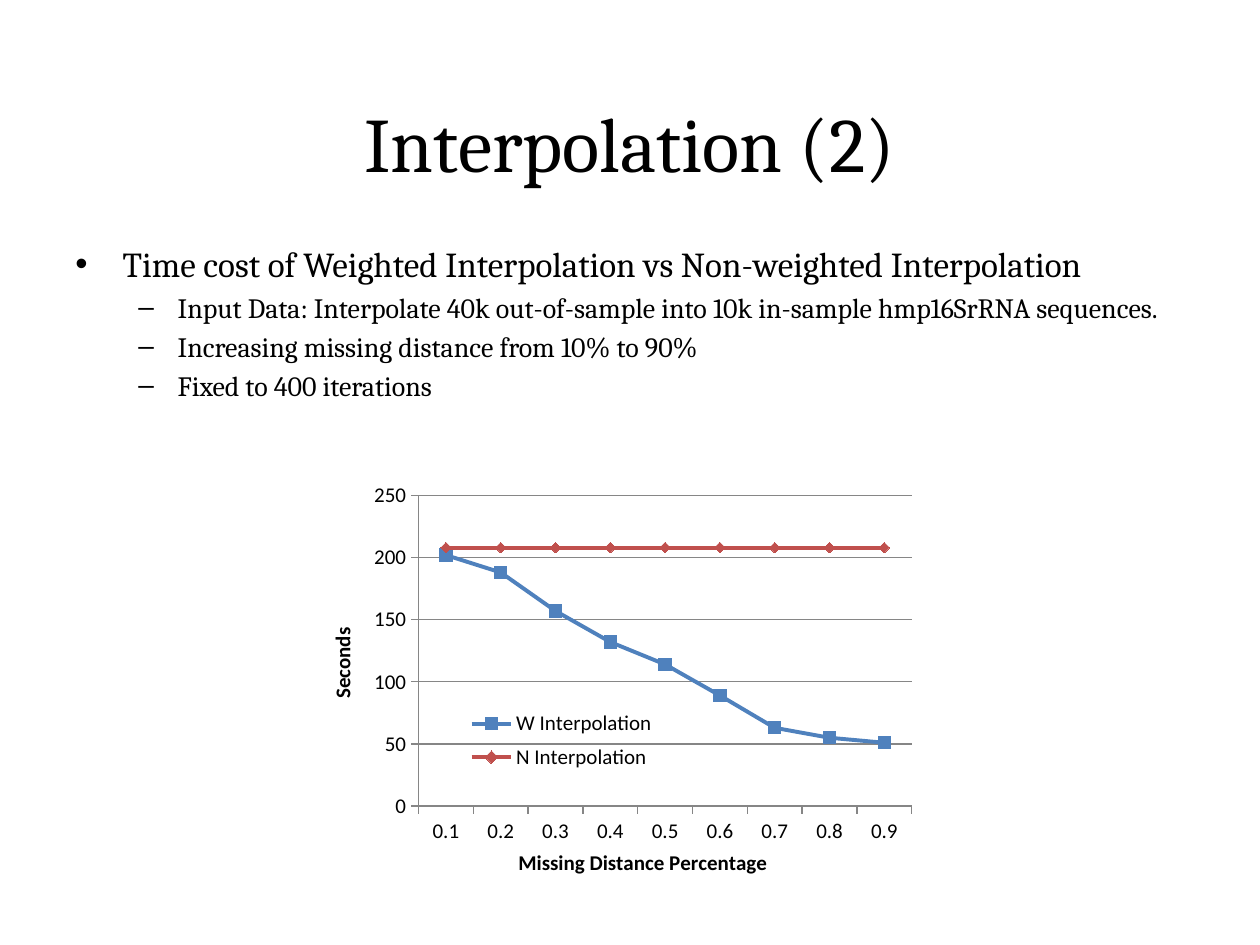
from dataclasses import dataclass

from lxml import etree
from pptx import Presentation
from pptx.chart import data as cd
from pptx.dml import color as col
from pptx.enum import chart as ch, text as tx
from pptx.oxml import ns
from pptx.util import Pt


@dataclass(frozen=True)
class Theme:
    ink: str = "000000"
    grid: str = "868686"
    blue: str = "4F81BD"
    red: str = "C0504D"
    serif: str = "Cambria"
    sans: str = "Calibri"
    title: int = 44
    body: int = 20
    sub: int = 16
    small: int = 12


THEME = Theme()
HEAD = "Interpolation (2)"
POINTS = [
    (0, "Time cost of Weighted Interpolation vs Non-weighted Interpolation"),
    (1, "Input Data: Interpolate 40k out-of-sample into 10k in-sample hmp16SrRNA sequences."),
    (1, "Increasing missing distance from 10% to 90%"),
    (1, "Fixed to 400 iterations"),
]
LEVELS = [("•", 27, -27, THEME.body), ("–", 58.5, -22.5, THEME.sub)]
CATS = [f"0.{n}" for n in range(1, 10)]
SERIES = [
    ("W Interpolation", [202, 188, 157, 132, 114, 89, 63, 55, 51],
     THEME.blue, ch.XL_MARKER_STYLE.SQUARE, 7),
    ("N Interpolation", [208] * 9, THEME.red, ch.XL_MARKER_STYLE.DIAMOND, 6),
]


def rgb(code):
    return col.RGBColor.from_string(code)


def set_font(font, size, name=THEME.sans, bold=False):
    font.size = Pt(size)
    font.name = name
    font.bold = bold
    font.color.rgb = rgb(THEME.ink)


def add_frame(slide, left, top, width, height, anchor=tx.MSO_ANCHOR.TOP):
    box = slide.shapes.add_textbox(Pt(left), Pt(top), Pt(width), Pt(height))
    frame = box.text_frame
    frame.word_wrap = True
    frame.vertical_anchor = anchor
    return frame


def write(para, words, size, name=THEME.serif, bold=False, align=None, before=0):
    para.alignment = align
    para.space_before = Pt(before)
    run = para.add_run()
    run.text = words
    set_font(run.font, size, name, bold)


def add_bullet(para, mark, left, first):
    props = para._p.get_or_add_pPr()
    props.set("marL", str(Pt(left)))
    props.set("indent", str(Pt(first)))
    face = etree.SubElement(props, ns.qn("a:buFont"))
    face.set("typeface", "Arial")
    etree.SubElement(props, ns.qn("a:buChar")).set("char", mark)


def add_list(slide):
    frame = add_frame(slide, 36, 135, 648, 356)
    for row, (level, words) in enumerate(POINTS):
        para = frame.add_paragraph() if row else frame.paragraphs[0]
        mark, left, first, size = LEVELS[level]
        para.level = level
        add_bullet(para, mark, left, first)
        write(para, words, size, before=0.2 * size if row else 0)


def place(part, index, inner=False, **sides):
    for old in part.findall(ns.qn("c:layout")):
        part.remove(old)
    layout = etree.Element(ns.qn("c:layout"))
    manual = etree.SubElement(layout, ns.qn("c:manualLayout"))
    values = {"xMode": "edge", "yMode": "edge", **sides}
    if inner:
        values = {"layoutTarget": "inner", **values}
    for key, value in values.items():
        etree.SubElement(manual, ns.qn("c:" + key)).set("val", str(value))
    part.insert(index, layout)


def set_axis(axis, title):
    set_font(axis.tick_labels.font, THEME.small)
    axis.major_tick_mark = ch.XL_TICK_MARK.OUTSIDE
    axis.minor_tick_mark = ch.XL_TICK_MARK.NONE
    axis.format.line.color.rgb = rgb(THEME.grid)
    para = axis.axis_title.text_frame.paragraphs[0]
    write(para, title, THEME.small, name=THEME.sans, bold=True)


def set_series(series, tint, mark, size):
    series.smooth = False
    series.format.line.width = Pt(2.25)
    series.format.line.color.rgb = rgb(tint)
    marker = series.marker
    marker.style = mark
    marker.size = size
    marker.format.fill.solid()
    marker.format.fill.fore_color.rgb = rgb(tint)
    marker.format.line.color.rgb = rgb(tint)


def add_graph(slide):
    data = cd.CategoryChartData()
    data.categories = CATS
    for name, values, *_ in SERIES:
        data.add_series(name, values)
    chart = slide.shapes.add_chart(
        ch.XL_CHART_TYPE.LINE_MARKERS, Pt(180), Pt(276), Pt(348), Pt(228), data
    ).chart
    set_font(chart.font, THEME.small)
    chart.has_title = False
    plot = chart.plots[0]
    plot.vary_by_categories = False
    for series, (_, _, tint, mark, size) in zip(plot.series, SERIES):
        set_series(series, tint, mark, size)

    set_axis(chart.category_axis, "Missing Distance Percentage")
    axis = chart.value_axis
    set_axis(axis, "Seconds")
    axis.minimum_scale, axis.maximum_scale, axis.major_unit = 0, 250, 50
    axis.has_major_gridlines = True
    axis.major_gridlines.format.line.color.rgb = rgb(THEME.grid)

    chart.has_legend = True
    legend = chart.legend
    legend.position = ch.XL_LEGEND_POSITION.RIGHT
    legend.include_in_layout = False
    set_font(legend.font, THEME.small)
    place(legend._element, 1, x=0.24, y=0.55, w=0.33, h=0.19)
    area = chart._chartSpace.chart.plotArea
    place(area, 0, inner=True, x=0.17, y=0.03, w=0.81, h=0.78)


def main():
    deck = Presentation()
    deck.slide_width, deck.slide_height = Pt(720), Pt(540)
    slide = deck.slides.add_slide(deck.slide_layouts[6])
    frame = add_frame(slide, 36, 36, 648, 90, anchor=tx.MSO_ANCHOR.MIDDLE)
    write(frame.paragraphs[0], HEAD, THEME.title, align=tx.PP_ALIGN.CENTER)
    add_list(slide)
    add_graph(slide)
    deck.save("out.pptx")


if __name__ == "__main__":
    main()
